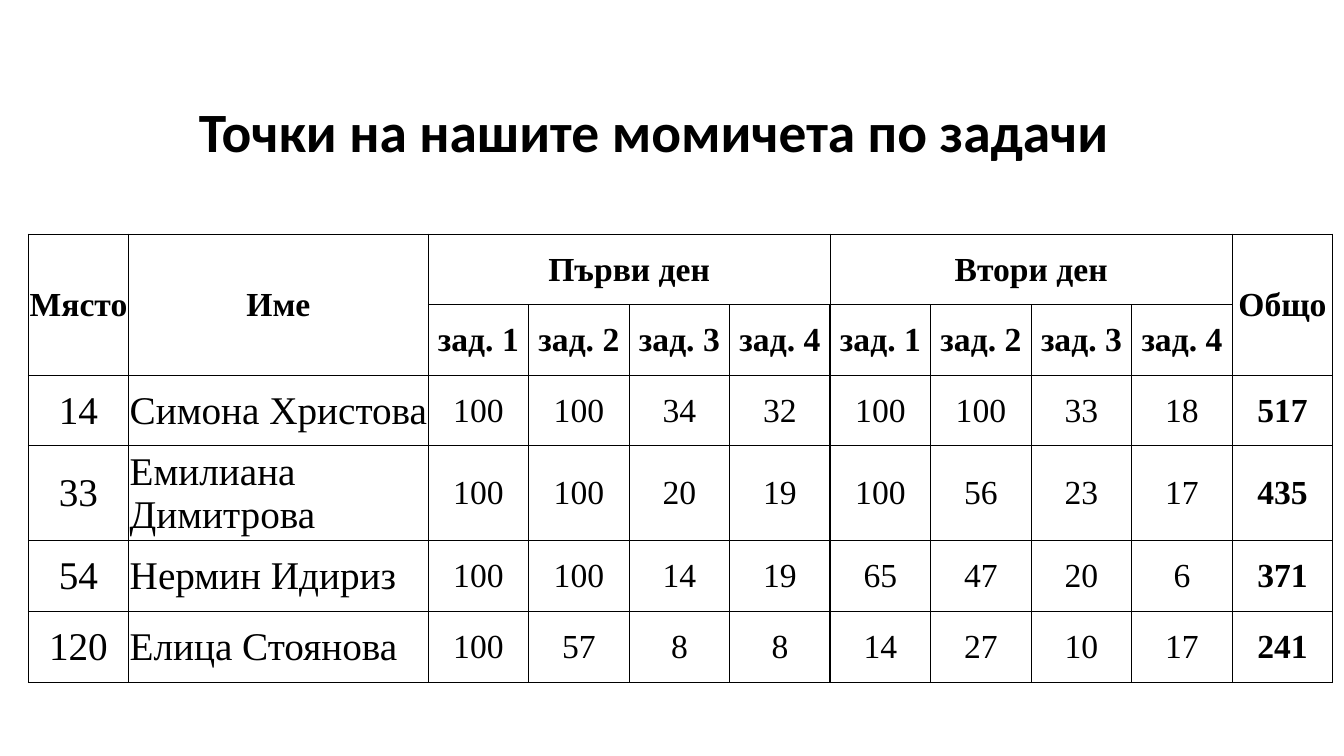
from lxml import etree
from pptx import Presentation
from pptx.dml.color import RGBColor
from pptx.enum.text import MSO_ANCHOR, PP_ALIGN
from pptx.oxml.ns import qn
from pptx.util import Inches, Pt

BLACK = RGBColor(0x00, 0x00, 0x00)
CENTER, LEFT = PP_ALIGN.CENTER, PP_ALIGN.LEFT
MIDDLE = MSO_ANCHOR.MIDDLE

TASKS = [f"зад. {number}" for number in range(1, 5)]
HEADINGS = [
    ["Място", "Име", "Първи ден", "", "", "", "Втори ден", "", "", "", "Общо"],
    ["", "", *TASKS, *TASKS, ""],
]
RESULTS = [
    [14, "Симона Христова", 100, 100, 34, 32, 100, 100, 33, 18, 517],
    [33, "Емилиана Димитрова", 100, 100, 20, 19, 100, 56, 23, 17, 435],
    [54, "Нермин Идириз", 100, 100, 14, 19, 65, 47, 20, 6, 371],
    [120, "Елица Стоянова", 100, 57, 8, 8, 14, 27, 10, 17, 241],
]
ROWS = HEADINGS + RESULTS
MERGES = [(0, 0, 1, 0), (0, 1, 1, 1), (0, 2, 0, 5), (0, 6, 0, 9), (0, 10, 1, 10)]
NAME, LAST_FIRST_DAY, FIRST_SECOND_DAY, TOTAL = 1, 5, 6, 10
TABLE_WIDTH, NAME_WIDTH, ROW_HEIGHT = 12.94, 2.97, 0.7


class ScoreSlide:
    title_font = "Calibri"
    table_font = "Times New Roman"
    thin, thick = 0.5, 2

    def __init__(self, presentation):
        self.slide = presentation.slides.add_slide(presentation.slide_layouts[6])

    def style(self, paragraph, font_name, size, bold, alignment):
        paragraph.alignment = alignment
        paragraph.font.name = font_name
        paragraph.font.size = Pt(size)
        paragraph.font.bold = bold
        paragraph.font.color.rgb = BLACK

    def title(self, text, left, top, width, height):
        box = self.slide.shapes.add_textbox(
            Inches(left), Inches(top), Inches(width), Inches(height)
        )
        frame = box.text_frame
        frame.word_wrap = True
        frame.vertical_anchor = MIDDLE
        paragraph = frame.paragraphs[0]
        paragraph.text = text
        paragraph.line_spacing = 0.9
        self.style(paragraph, self.title_font, 39.6, True, CENTER)

    def border(self, cell, side, width):
        properties = cell._tc.get_or_add_tcPr()
        line = etree.SubElement(properties, qn(f"a:ln{side}"), w=str(Pt(width)))
        fill = etree.SubElement(line, qn("a:solidFill"))
        etree.SubElement(fill, qn("a:srgbClr"), val=str(BLACK))

    def cell(self, cell, value, row, column):
        heading = row < len(HEADINGS)
        cell.margin_left = cell.margin_right = cell.margin_top = Inches(0.01)
        cell.margin_bottom = 0
        cell.vertical_anchor = MIDDLE
        paragraph = cell.text_frame.paragraphs[0]
        paragraph.text = str(value)
        size = 28 if not heading and column <= NAME else 24
        alignment = LEFT if not heading and column == NAME else CENTER
        self.style(paragraph, self.table_font, size, heading or column == TOTAL, alignment)
        day_divider = {LAST_FIRST_DAY: "R", FIRST_SECOND_DAY: "L"}.get(column)
        for side in "LRTB":
            thick = row > 0 and side == day_divider
            self.border(cell, side, self.thick if thick else self.thin)
        cell.fill.background()

    def table(self, left, top):
        frame = self.slide.shapes.add_table(
            len(ROWS), len(ROWS[0]), Inches(left), Inches(top),
            Inches(TABLE_WIDTH), Inches(ROW_HEIGHT * len(ROWS)),
        )
        table = frame.table
        table.first_row = table.horz_banding = False
        score_width = (TABLE_WIDTH - NAME_WIDTH) / (len(ROWS[0]) - 1)
        for index, column in enumerate(table.columns):
            column.width = Inches(NAME_WIDTH if index == NAME else score_width)
        for row, values in enumerate(ROWS):
            table.rows[row].height = Inches(ROW_HEIGHT)
            for column, value in enumerate(values):
                self.cell(table.cell(row, column), value, row, column)
        for top_row, first, bottom_row, last in MERGES:
            table.cell(top_row, first).merge(table.cell(bottom_row, last))


def main():
    presentation = Presentation()
    presentation.slide_width = Inches(13.33)
    presentation.slide_height = Inches(7.5)
    score_slide = ScoreSlide(presentation)
    score_slide.title("Точки на нашите момичета по задачи", 1.42, 0.73, 10.13, 1.21)
    score_slide.table(0.28, 2.32)
    presentation.save("out.pptx")


if __name__ == "__main__":
    main()
